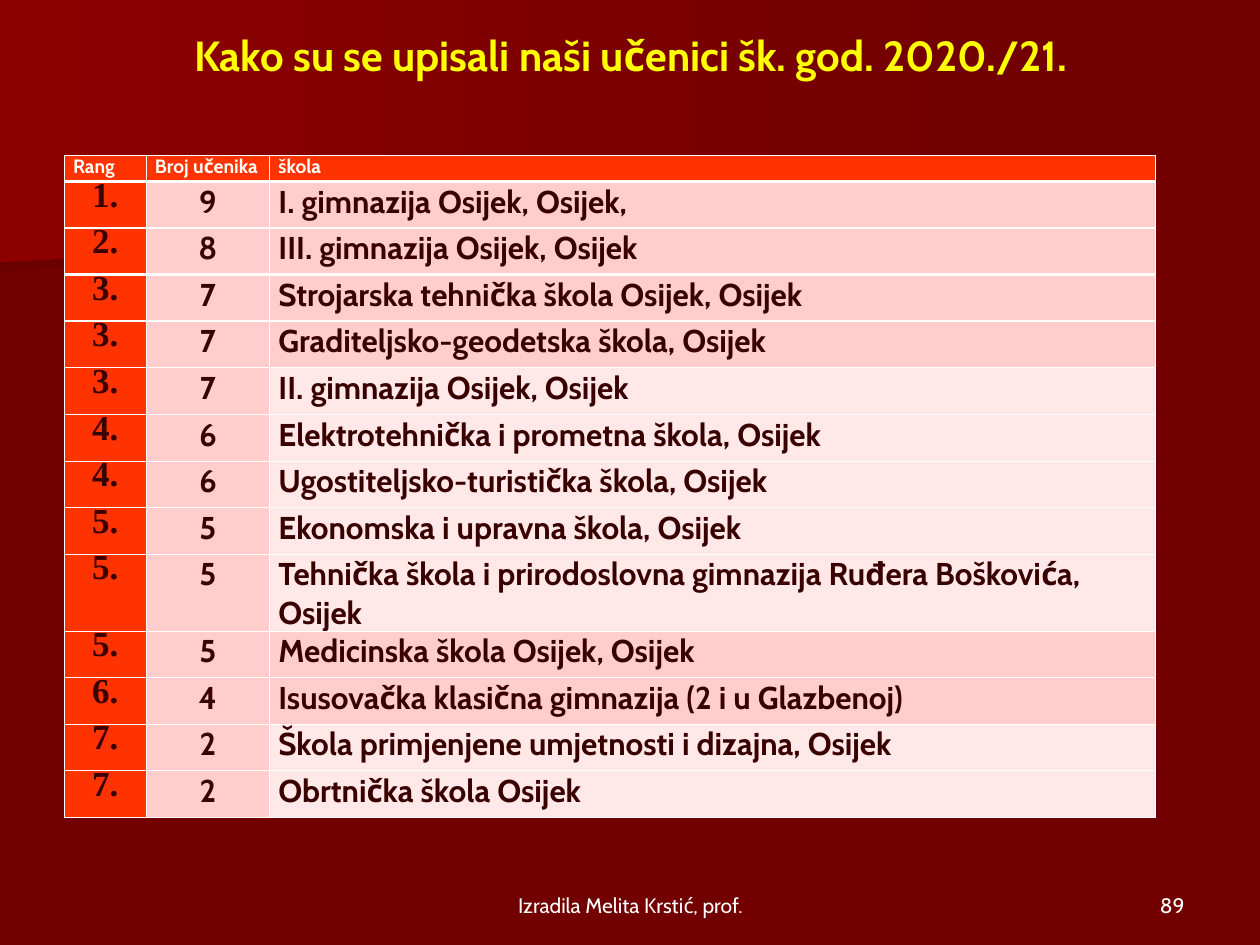
"""Build the slide showing which schools the pupils enrolled in, 2020/21."""
from lxml.etree import SubElement
from pptx import Presentation
from pptx.dml.color import RGBColor
from pptx.enum.text import MSO_ANCHOR, PP_ALIGN
from pptx.oxml.ns import qn
from pptx.util import Inches, Pt

DARK_RED = RGBColor(0x72, 0x00, 0x00)
DEEP_RED = RGBColor(0x6B, 0x00, 0x00)
BRIGHT_RED = RGBColor(0x8C, 0x00, 0x00)
ORANGE = RGBColor(0xFF, 0x33, 0x00)
PINK = RGBColor(0xFF, 0xCD, 0xCB)
PALE_PINK = RGBColor(0xFF, 0xE8, 0xE7)
BROWN = RGBColor(0x39, 0x00, 0x00)
YELLOW = RGBColor(0xFF, 0xFF, 0x00)
WHITE = RGBColor(0xFF, 0xFF, 0xFF)

HEADINGS = ("Rang", "Broj učenika", "škola")
SCHOOLS = [
    ("1.", "9", "I. gimnazija Osijek, Osijek,", PINK),
    ("2.", "8", "III. gimnazija Osijek, Osijek", PINK),
    ("3.", "7", "Strojarska tehnička škola Osijek, Osijek", PINK),
    ("3.", "7", "Graditeljsko-geodetska škola, Osijek", PINK),
    ("3.", "7", "II. gimnazija Osijek, Osijek", PALE_PINK),
    ("4.", "6", "Elektrotehnička i prometna škola, Osijek", PALE_PINK),
    ("4.", "6", "Ugostiteljsko-turistička škola, Osijek", PALE_PINK),
    ("5.", "5", "Ekonomska i upravna škola, Osijek", PALE_PINK),
    ("5.", "5", "Tehnička škola i prirodoslovna gimnazija Ruđera Boškovića, Osijek", PALE_PINK),
    ("5.", "5", "Medicinska škola Osijek, Osijek", PINK),
    ("6.", "4", "Isusovačka klasična gimnazija (2 i u Glazbenoj)", PINK),
    ("7.", "2", "Škola primjenjene umjetnosti i dizajna, Osijek", PALE_PINK),
    ("7.", "2", "Obrtnička škola Osijek", PALE_PINK),
]
THICK_EDGES = 4


def write(frame, text, size, color, align, bold=True, font="Cabin", spacing=None):
    para = frame.paragraphs[0]
    para.alignment = align
    if spacing:
        para.line_spacing = spacing
    span = para.add_run()
    span.text = text
    span.font.name = font
    span.font.size = Pt(size)
    span.font.bold = bold
    span.font.color.rgb = color


def add_border(cell, side, width):
    line = SubElement(cell._tc.get_or_add_tcPr(), qn(f"a:ln{side}"), w=str(Pt(width)))
    fill = SubElement(line, qn("a:solidFill"))
    SubElement(fill, qn("a:srgbClr"), val=str(WHITE))


deck = Presentation()
deck.slide_width = Inches(10)
deck.slide_height = Inches(7.5)
page = deck.slides.add_slide(deck.slide_layouts[6])
page.background.fill.solid()
page.background.fill.fore_color.rgb = DARK_RED

beams = [
    ([(7.78, 1.53), (0, 2.16), (0, 1.01), (7.79, 1.01), (7.78, 1.28)], DEEP_RED),
    ([(7.91, 1.62), (0, 2.08), (0, 0), (7.92, 0)], BRIGHT_RED),
]
for points, end_color in beams:
    corners = [(Inches(x), Inches(y)) for x, y in points]
    builder = page.shapes.build_freeform(*corners[0])
    builder.add_line_segments(corners[1:], close=True)
    beam = builder.convert_to_shape()
    beam.shadow.inherit = False
    beam.line.fill.background()
    beam.fill.gradient()
    beam.fill.gradient_angle = 180
    for stop, color in zip(beam.fill.gradient_stops, (DARK_RED, end_color)):
        stop.color.rgb = color

texts = [
    ("Kako su se upisali naši učenici šk. god. 2020./21.", (0.16, 0.13, 9.69, 0.61),
     24, YELLOW, PP_ALIGN.CENTER, True, MSO_ANCHOR.MIDDLE),
    ("Izradila Melita Krstić, prof.", (3.42, 6.83, 3.17, 0.5),
     12, WHITE, PP_ALIGN.CENTER, False, MSO_ANCHOR.BOTTOM),
    ("89", (7.17, 6.83, 2.33, 0.5),
     12, WHITE, PP_ALIGN.RIGHT, False, MSO_ANCHOR.BOTTOM),
]
for text, place, size, color, align, bold, anchor in texts:
    box = page.shapes.add_textbox(*map(Inches, place))
    box.text_frame.word_wrap = True
    box.text_frame.vertical_anchor = anchor
    write(box.text_frame, text, size, color, align, bold)

table = page.shapes.add_table(
    len(SCHOOLS) + 1, len(HEADINGS), Inches(0.51), Inches(1.23), Inches(8.66), Inches(5.02)
).table
for column, width in zip(table.columns, (0.65, 0.98, 7.03)):
    column.width = Inches(width)
for row in table.rows:
    row.height = Inches(0.37)
table.rows[0].height = Inches(0.21)

for row_index, row in enumerate(table.rows):
    for column_index, cell in enumerate(row.cells):
        cell.margin_left = cell.margin_right = Inches(0.07)
        cell.margin_top = cell.margin_bottom = 0
        add_border(cell, "L", 0.45)
        add_border(cell, "R", 0.45)
        add_border(cell, "T", 1.47 if 0 < row_index <= THICK_EDGES else 0.45)
        add_border(cell, "B", 1.47 if row_index < THICK_EDGES else 0.45)
        cell.fill.solid()
        if row_index == 0:
            cell.fill.fore_color.rgb = ORANGE
            write(cell.text_frame, HEADINGS[column_index], 11, WHITE, PP_ALIGN.LEFT, spacing=1.01)
            continue
        *values, shade = SCHOOLS[row_index - 1]
        cell.fill.fore_color.rgb = (ORANGE, PINK, shade)[column_index]
        if column_index == 0:
            write(cell.text_frame, values[0], 20, BROWN, PP_ALIGN.CENTER,
                  font="Times New Roman", spacing=0.83)
        else:
            cell.margin_top = Inches(0.01)
            align = PP_ALIGN.CENTER if column_index == 1 else PP_ALIGN.LEFT
            write(cell.text_frame, values[column_index], 18, BROWN, align)

deck.save("out.pptx")
